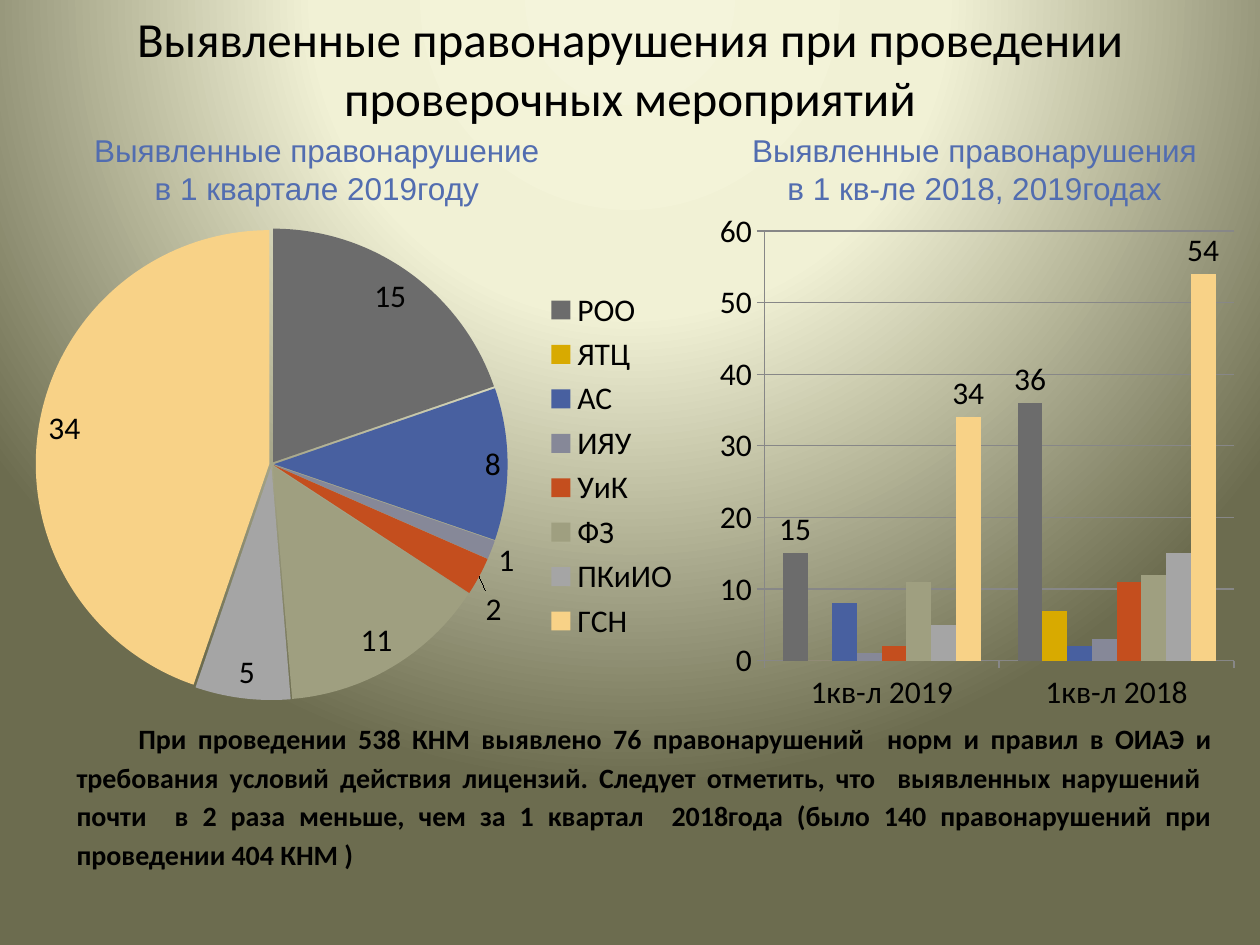
from pptx import Presentation
from pptx.chart.data import CategoryChartData
from pptx.dml.color import RGBColor
from pptx.enum.chart import XL_CHART_TYPE, XL_LABEL_POSITION, XL_LEGEND_POSITION, XL_TICK_MARK
from pptx.enum.text import MSO_ANCHOR, PP_ALIGN
from pptx.oxml import parse_xml
from pptx.oxml.ns import nsdecls, qn
from pptx.util import Inches, Pt

COLORS = {
    "ink": "000000", "head": "526DB0", "grid": "878787",
    "glow": "F4F4DB", "mid": "F1F1D5", "edge": "6C6C4F",
}
UNITS = {
    "РОО": ("6C6C6C", 15, 36),
    "ЯТЦ": ("D8AA00", 0, 7),
    "АС": ("4860A0", 8, 2),
    "ИЯУ": ("868898", 1, 3),
    "УиК": ("C44E1E", 2, 11),
    "ФЗ": ("9F9F80", 11, 12),
    "ПКиИО": ("A5A5A5", 5, 15),
    "ГСН": ("F8D287", 34, 54),
}
TITLE = "Выявленные правонарушения при проведении проверочных мероприятий"
NOTE = (
    "При проведении 538 КНМ выявлено 76 правонарушений  норм и правил в ОИАЭ "
    "и требования условий действия лицензий. Следует отметить, что  выявленных "
    "нарушений  почти  в 2 раза меньше, чем за 1 квартал  2018года "
    "(было 140 правонарушений при проведении 404 КНМ )"
)


def box(*sides):
    return [Inches(side) for side in sides]


def paint(fill, color):
    fill.solid()
    fill.fore_color.rgb = RGBColor.from_string(color)


def style(font, size, name="Calibri", color="ink", bold=False):
    font.size, font.name, font.bold = Pt(size), name, bold
    font.color.rgb = RGBColor.from_string(COLORS[color])


def add_back(slide):
    stops = "".join(
        f'<a:gs pos="{spot}"><a:srgbClr val="{COLORS[name]}"/></a:gs>'
        for spot, name in ((0, "glow"), (40000, "mid"), (100000, "edge"))
    )
    fill = slide.background.fill
    fill.solid()
    solid = slide.element.cSld.find(".//" + qn("a:solidFill"))
    solid.getparent().replace(solid, parse_xml(
        f'<a:gradFill {nsdecls("a")} rotWithShape="1"><a:gsLst>{stops}</a:gsLst>'
        '<a:path path="circle"><a:fillToRect l="50000" t="-80000" r="50000" '
        'b="180000"/></a:path></a:gradFill>'
    ))


def add_title(slide, area):
    title = slide.shapes.title
    title.left, title.top, title.width, title.height = area
    frame = title.text_frame
    frame.text = TITLE
    frame.vertical_anchor = MSO_ANCHOR.MIDDLE
    line = frame.paragraphs[0]
    line.alignment = PP_ALIGN.CENTER
    style(line.font, 28)


def add_text(slide, area, lines, align, **look):
    frame = slide.shapes.add_textbox(*area).text_frame
    frame.word_wrap = True
    frame.text = "\n".join(lines)
    for line in frame.paragraphs:
        line.alignment = align
        style(line.font, **look)
    return frame


def add_note(slide, area):
    frame = add_text(slide, area, [NOTE], PP_ALIGN.JUSTIFY, size=16, bold=True)
    line = frame.paragraphs[0]
    line.line_spacing = 1.15
    props = line._p.get_or_add_pPr()
    props.set("marL", "0")
    props.set("indent", str(Inches(0.49)))


def set_plot(chart, left, top, width, height):
    plot = chart._chartSpace.chart.plotArea
    for old in plot.findall(qn("c:layout")):
        plot.remove(old)
    spots = zip("xywh", (left, top, width, height))
    parts = "".join(f'<c:{key} val="{val}"/>' for key, val in spots)
    plot.insert(0, parse_xml(
        f'<c:layout {nsdecls("c")}><c:manualLayout><c:layoutTarget val="inner"/>'
        f'<c:xMode val="edge"/><c:yMode val="edge"/>{parts}'
        '</c:manualLayout></c:layout>'
    ))


def add_chart(slide, area, kind, cats, rows):
    data = CategoryChartData()
    data.categories = cats
    for name, vals in rows:
        data.add_series(name, vals)
    chart = slide.shapes.add_chart(kind, *area, data).chart
    chart.has_title = False
    chart.has_legend = False
    style(chart.font, 18)
    return chart


def add_pie(slide, area):
    rows = [("Series 1", [unit[1] for unit in UNITS.values()])]
    chart = add_chart(slide, area, XL_CHART_TYPE.PIE, list(UNITS), rows)
    chart.has_legend = True
    chart.legend.position = XL_LEGEND_POSITION.RIGHT
    chart.legend.include_in_layout = False
    set_plot(chart, 0.025, 0.06, 0.7, 0.875)
    plot = chart.plots[0]
    plot.vary_by_categories = True
    series = plot.series[0]
    for spot, unit in enumerate(UNITS.values()):
        paint(series.points[spot].format.fill, unit[0])
    series._element.insert_element_before(
        parse_xml(f'<c:explosion {nsdecls("c")} val="1"/>'),
        "c:dPt", "c:dLbls", "c:cat", "c:val",
    )
    labels = series.data_labels
    labels.show_value = True
    labels.number_format = "0;;;"
    labels.number_format_is_linked = False
    labels.position = XL_LABEL_POSITION.BEST_FIT


def add_bars(slide, area):
    rows = [(name, unit[1:]) for name, unit in UNITS.items()]
    cats = ["1кв-л 2019", "1кв-л 2018"]
    chart = add_chart(slide, area, XL_CHART_TYPE.COLUMN_CLUSTERED, cats, rows)
    set_plot(chart, 0.125, 0.068, 0.838, 0.818)
    plot = chart.plots[0]
    plot.gap_width = 150
    plot.overlap = 0
    plot.vary_by_categories = False
    for series, unit in zip(plot.series, UNITS.values()):
        paint(series.format.fill, unit[0])
        if series.name in ("РОО", "ГСН"):
            series.data_labels.show_value = True
            series.data_labels.position = XL_LABEL_POSITION.OUTSIDE_END
    scale = chart.value_axis
    scale.minimum_scale, scale.maximum_scale, scale.major_unit = 0, 60, 10
    scale.has_major_gridlines = True
    for axis in (scale, chart.category_axis):
        axis.major_tick_mark = XL_TICK_MARK.OUTSIDE
    for part in (scale, chart.category_axis, scale.major_gridlines):
        part.format.line.width = Pt(0.75)
        part.format.line.color.rgb = RGBColor.from_string(COLORS["grid"])


def main():
    deck = Presentation()
    deck.slide_width, deck.slide_height = box(10, 7.5)
    slide = deck.slides.add_slide(deck.slide_layouts[5])
    add_back(slide)
    add_title(slide, box(0.5, 0, 9, 1.07))
    add_pie(slide, box(0.15, 1.55, 5.35, 4.29))
    add_bars(slide, box(5.51, 1.55, 4.45, 4.17))
    heads = (
        (0.43, 4.17, ["Выявленные правонарушение", "в 1 квартале 2019году"]),
        (5.47, 4.53, ["Выявленные правонарушения", "в 1 кв-ле 2018, 2019годах"]),
    )
    for left, width, lines in heads:
        add_text(slide, box(left, 0.99, width, 0.71), lines, PP_ALIGN.CENTER,
                 size=18, name="Arial", color="head")
    add_note(slide, box(0.51, 5.64, 9.21, 1.86))
    deck.save("out.pptx")


if __name__ == "__main__":
    main()
